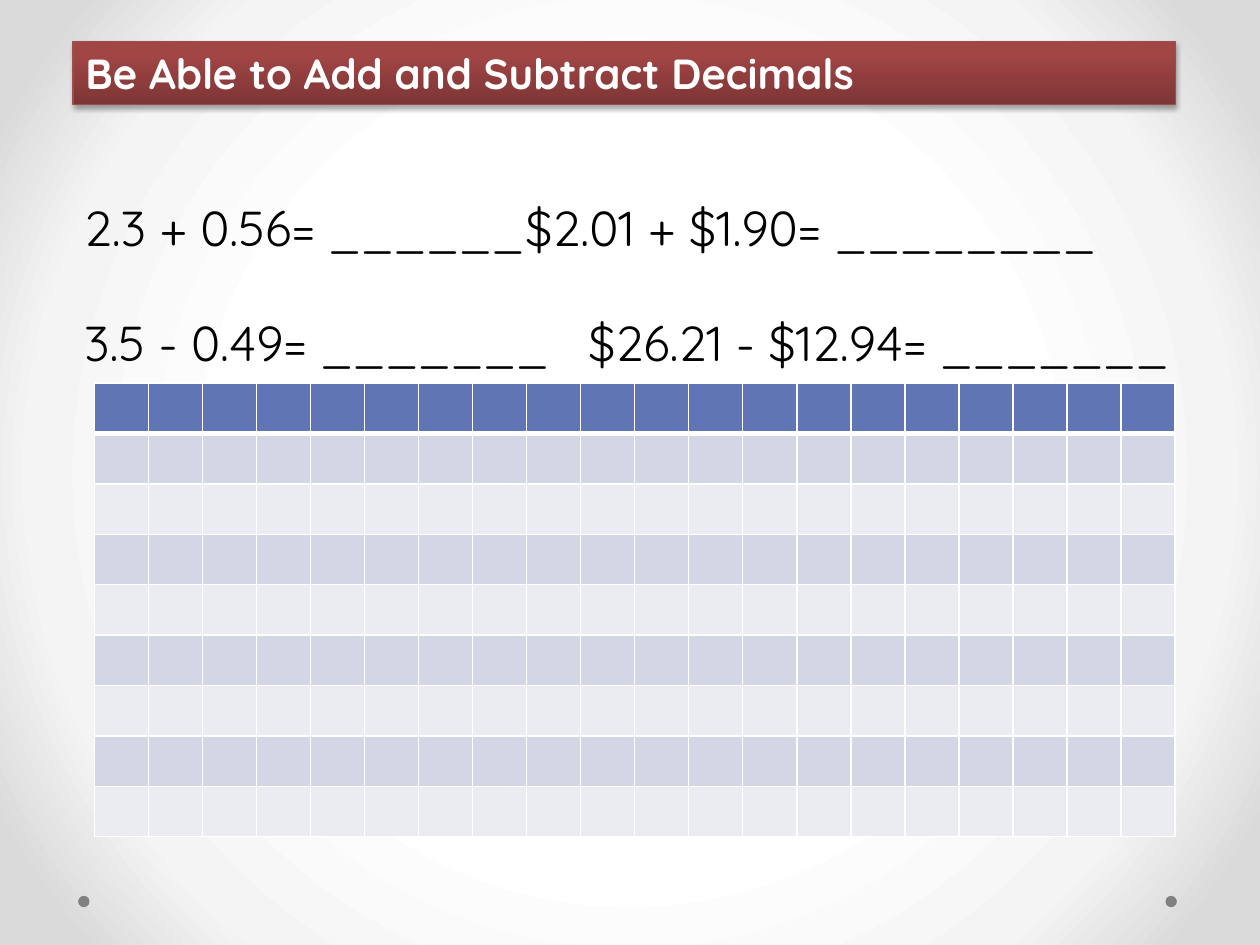
from lxml.etree import SubElement
from pptx import Presentation
from pptx.dml.color import RGBColor
from pptx.enum.shapes import MSO_SHAPE
from pptx.enum.text import MSO_ANCHOR, PP_ALIGN
from pptx.oxml.ns import qn
from pptx.util import Inches, Pt

HEX = {
    "white": "FFFFFF", "black": "000000", "dot": "808080", "edge": "9A4E4E",
    "head": "6076B4", "odd": "D2D6E5", "even": "EAECF2",
}
GLOW = [(50, "FFFFFF"), (76, "F4F4F4"), (92, "DADADA")]
REDS = [(0, "7D3535"), (80, "A24545"), (100, "A44343")]
SUMS = [
    "2.3 + 0.56= ______\t$2.01 + $1.90= ________",
    "3.5 - 0.49= _______\t$26.21 - $12.94= _______",
]
ROWS, COLS = 9, 20


def rgb(name):
    """Return the named colour."""
    return RGBColor.from_string(HEX[name])


def put(item, **form):
    """Set each format value on the item."""
    for key, val in form.items():
        setattr(item, key, val)


def node(root, tag, **attrs):
    """Append a drawing element with its attributes."""
    return SubElement(root, qn(f"a:{tag}"), {k: str(v) for k, v in attrs.items()})


def blend(fill, root, stops, turn=None):
    """Give a gradient fill, linear at an angle or else circular."""
    fill.gradient()
    grad = root.find(".//" + qn("a:gradFill"))
    for child in list(grad):
        grad.remove(child)
    group = node(grad, "gsLst")
    for spot, shade in stops:
        node(node(group, "gs", pos=spot * 1000), "srgbClr", val=shade)
    if turn is None:
        ring = node(grad, "path", path="circle")
        node(ring, "fillToRect", l=50000, t=50000, r=50000, b=50000)
    else:
        node(grad, "lin", ang=turn * 60000, scaled=0)


def write(para, text, color, **form):
    """Write one left-aligned paragraph."""
    para.alignment = PP_ALIGN.LEFT
    run = para.add_run()
    run.text = text
    put(run.font, name="Quicksand", **form)
    run.font.color.rgb = rgb(color)


def add_dot(slide, left):
    """Draw a small footer dot."""
    dot = slide.shapes.add_shape(
        MSO_SHAPE.OVAL, Inches(left), Inches(7.11), Inches(0.09), Inches(0.09))
    dot.shadow.inherit = False
    dot.fill.solid()
    dot.fill.fore_color.rgb = rgb("dot")
    dot.line.fill.background()


def add_title(slide, text):
    """Draw the red title bar."""
    bar = slide.shapes.add_shape(
        MSO_SHAPE.RECTANGLE, Inches(0.58), Inches(0.33), Inches(8.75), Inches(0.5))
    blend(bar.fill, bar._element.spPr, REDS, 270)
    bar.line.color.rgb = rgb("edge")
    bar.line.width = Pt(0.75)
    bar.shadow.inherit = False
    glow = bar._element.spPr.find(qn("a:effectLst"))
    cast = node(glow, "outerShdw", blurRad=Pt(3.1), dist=Pt(1.8),
                dir=90 * 60000, rotWithShape=0)
    node(node(cast, "srgbClr", val=HEX["black"]), "alpha", val=35000)
    put(bar.text_frame, word_wrap=True, vertical_anchor=MSO_ANCHOR.MIDDLE)
    write(bar.text_frame.paragraphs[0], text, "white", size=Pt(24), bold=True)


def add_sums(slide):
    """Write the sums in two tabbed columns."""
    box = slide.shapes.add_textbox(Inches(0.57), Inches(1.05), Inches(9), Inches(2.93))
    frame = box.text_frame
    put(frame, word_wrap=True, margin_top=Inches(0.52))
    for i, text in enumerate(SUMS):
        para = frame.add_paragraph() if i else frame.paragraphs[0]
        para.space_before = Pt(32 * i)
        write(para, text, "black", size=Pt(28))


def edge(cell, tag, width):
    """Draw one white cell border."""
    line = node(cell._tc.get_or_add_tcPr(), tag, w=Pt(width))
    node(node(line, "solidFill"), "srgbClr", val=HEX["white"])


def add_grid(slide):
    """Draw the empty banded working grid."""
    table = slide.shapes.add_table(
        ROWS, COLS, Inches(0.75), Inches(3.04), Inches(8.58), Inches(3.6)).table
    for r in range(ROWS):
        shade = "head" if r == 0 else "odd" if r % 2 else "even"
        for c in range(COLS):
            cell = table.cell(r, c)
            put(cell, margin_top=0, margin_bottom=0)
            edge(cell, "lnL", 1)
            edge(cell, "lnR", 1)
            edge(cell, "lnT", 3 if r == 1 else 1)
            edge(cell, "lnB", 3 if r == 0 else 1)
            cell.fill.solid()
            cell.fill.fore_color.rgb = rgb(shade)


def main():
    """Build and save the slide."""
    deck = Presentation()
    put(deck, slide_width=Inches(10), slide_height=Inches(7.5))
    slide = deck.slides.add_slide(deck.slide_layouts[6])
    blend(slide.background.fill, slide._element, GLOW)
    for left in (9.25, 0.62):
        add_dot(slide, left)
    add_title(slide, "Be Able to Add and Subtract Decimals")
    add_sums(slide)
    add_grid(slide)
    deck.save("out.pptx")


if __name__ == "__main__":
    main()
